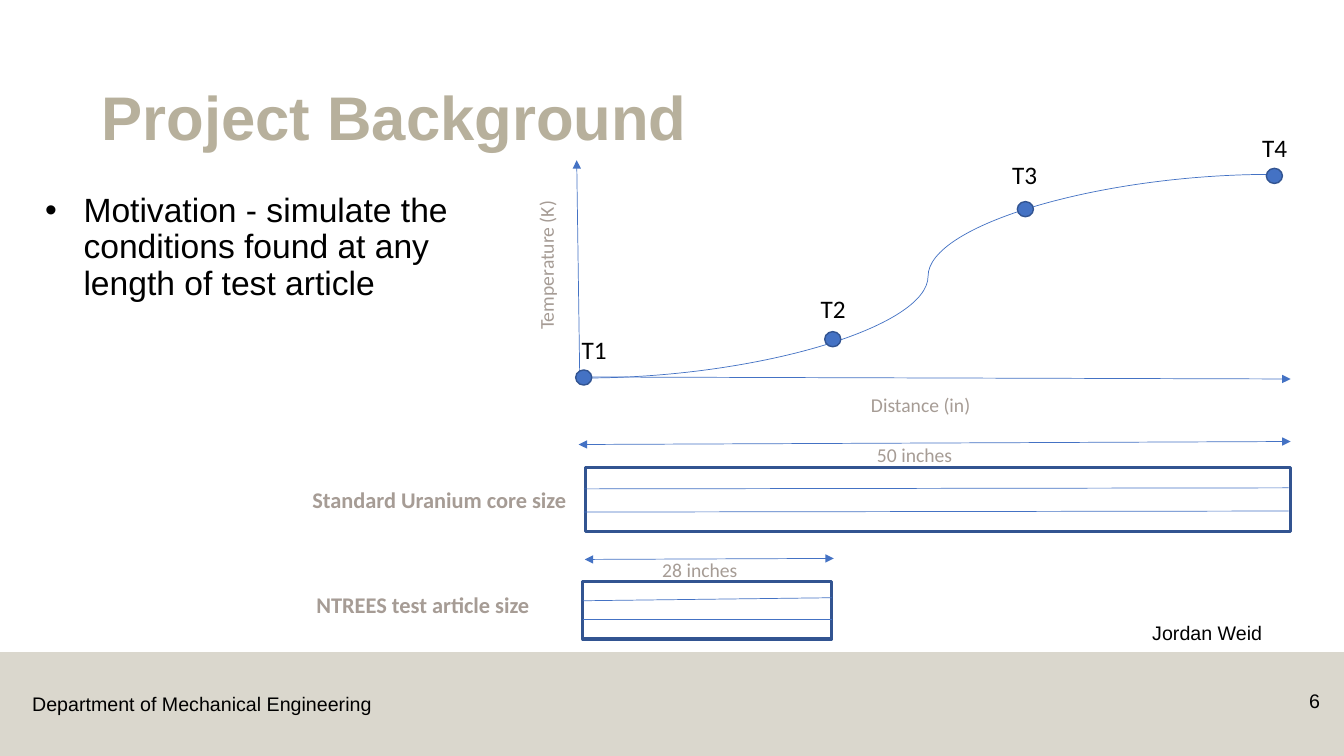
import pptx
import pptx.util
import pptx.dml.color
import pptx.enum.shapes
import pptx.enum.text
import pptx.oxml.ns
import pptx.oxml.xmlchemy

Inches = pptx.util.Inches
Pt = pptx.util.Pt
SHAPE = pptx.enum.shapes.MSO_SHAPE
CONNECTOR = pptx.enum.shapes.MSO_CONNECTOR
ANCHOR = pptx.enum.text.MSO_ANCHOR
ALIGN = pptx.enum.text.PP_ALIGN

BLUE, NAVY = "4472C4", "325491"
TAN, GREY, BLACK = "B7B09C", "A69C95", "000000"


def color(value):
    return pptx.dml.color.RGBColor.from_string(value)


def add_xml(parent, tag, **attrs):
    el = pptx.oxml.xmlchemy.OxmlElement(tag)
    for name, value in attrs.items():
        el.set(name, value)
    parent.append(el)


def add_text(s, text, x, y, w, h, size=14, font="Calibri", fill=GREY, bold=False,
             align=ALIGN.LEFT, anchor=ANCHOR.TOP, spacing=None, rotation=0,
             wrap=True, bullet=False):
    sp = s.shapes.add_textbox(Inches(x), Inches(y), Inches(w), Inches(h))
    sp.rotation = rotation
    tf = sp.text_frame
    tf.word_wrap = wrap
    tf.vertical_anchor = anchor
    p = tf.paragraphs[0]
    if bullet:
        pPr = p._p.get_or_add_pPr()
        pPr.set("marL", str(Inches(0.38)))
        pPr.set("indent", str(Inches(-0.38)))
        add_xml(pPr, "a:buFont", typeface="Arial")
        add_xml(pPr, "a:buChar", char="•")
    p.alignment = align
    if spacing:
        p.line_spacing = spacing
    r = p.add_run()
    r.text = text
    r.font.size = Pt(size)
    r.font.name = font
    r.font.bold = bold
    r.font.color.rgb = color(fill)


def add_box(s, kind, x, y, w, h, fill=None, alpha=None, line=None, width=1):
    sp = s.shapes.add_shape(kind, Inches(x), Inches(y), Inches(w), Inches(h))
    sp.shadow.inherit = False
    if fill:
        sp.fill.solid()
        sp.fill.fore_color.rgb = color(fill)
        if alpha:
            clr = sp._element.spPr.find(".//" + pptx.oxml.ns.qn("a:srgbClr"))
            add_xml(clr, "a:alpha", val=str(alpha * 1000))
    else:
        sp.fill.background()
    if line:
        sp.line.color.rgb = color(line)
        sp.line.width = Pt(width)
    else:
        sp.line.fill.background()


def add_line(s, x1, y1, x2, y2, kind=CONNECTOR.STRAIGHT, head=False, tail=False):
    cn = s.shapes.add_connector(kind, Inches(x1), Inches(y1), Inches(x2), Inches(y2))
    cn.line.color.rgb = color(BLUE)
    cn.line.width = Pt(0.5)
    spPr = cn._element.spPr
    ln = spPr.find(pptx.oxml.ns.qn("a:ln"))
    if head:
        add_xml(ln, "a:headEnd", type="triangle")
    if tail:
        add_xml(ln, "a:tailEnd", type="triangle")
    add_xml(spPr, "a:effectLst")


def add_core(s, box, channels, dimension):
    """A core outline, its inner channel lines and its dimension arrow."""
    add_box(s, SHAPE.RECTANGLE, *box, line=NAVY, width=2.25)
    for channel in channels:
        add_line(s, *channel)
    add_line(s, *dimension, head=True, tail=True)


def add_point(s, name, x, y, label_x, label_y):
    add_box(s, SHAPE.OVAL, x, y, 0.16, 0.15, fill=BLUE, line=NAVY)
    add_text(s, name, label_x, label_y, 0.84, 0.4, size=18, fill=BLACK)


def main():
    prs = pptx.Presentation()
    prs.slide_width, prs.slide_height = Inches(13.33), Inches(7.5)
    s = prs.slides.add_slide(prs.slide_layouts[6])

    # Footer band
    add_box(s, SHAPE.RECTANGLE, 0, 6.47, 13.33, 1.03, fill=TAN, alpha=50)
    body = dict(font="Arial", fill=BLACK)
    add_text(s, "Department of Mechanical Engineering", 0.22, 6.82, 3.59, 0.34,
             wrap=False, **body)
    add_text(s, "6", 12.42, 6.79, 0.77, 0.4, align=ALIGN.RIGHT, **body)
    add_text(s, "Jordan Weid", 11.33, 6.14, 2, 0.34, spacing=0.9, **body)

    # Title and motivation
    add_text(s, "Project Background", 0.91, 0.75, 11.5, 0.83, size=44, font="Arial",
             fill=TAN, bold=True, anchor=ANCHOR.BOTTOM, spacing=0.9)
    add_text(s, "Motivation - simulate the conditions found at any length of test article",
             0.35, 1.87, 4.45, 1.64, size=24, spacing=0.9, bullet=True, **body)

    # Temperature curve and axes
    add_line(s, 12.61, 1.73, 5.8, 3.75, kind=CONNECTOR.CURVE)
    add_line(s, 5.75, 3.75, 5.72, 1.59, tail=True)
    add_line(s, 5.74, 3.74, 12.8, 3.76, tail=True)
    add_text(s, "Distance (in)", 8.54, 3.85, 3, 0.34)
    add_text(s, "Temperature (K)", 3.92, 1.7, 3, 0.34, rotation=270)

    # Measuring points
    for point in [("T1", 5.71, 3.67, 5.67, 3.27),
                  ("T2", 8.18, 3.29, 8.04, 2.86),
                  ("T3", 10.09, 2, 9.94, 1.53),
                  ("T4", 12.56, 1.67, 12.42, 1.26)]:
        add_point(s, *point)

    # Core sizes
    add_core(s, (5.81, 4.64, 6.99, 0.63),
             [(5.79, 4.85, 12.78, 4.84), (5.79, 5.08, 12.78, 5.07)],
             (5.74, 4.41, 12.8, 4.38))
    add_core(s, (5.78, 5.77, 2.47, 0.57),
             [(5.78, 5.96, 8.25, 5.93), (5.78, 6.14, 8.25, 6.14)],
             (5.8, 5.55, 8.27, 5.54))
    add_text(s, "50 inches", 8.6, 4.34, 3, 0.34)
    add_text(s, "28 inches", 6.47, 5.49, 3, 0.34)
    add_text(s, "Standard Uranium core size", 3, 4.77, 3, 0.37, size=16, bold=True)
    add_text(s, "NTREES test article size", 3.04, 5.82, 3, 0.37, size=16, bold=True)

    prs.save("out.pptx")


if __name__ == "__main__":
    main()
